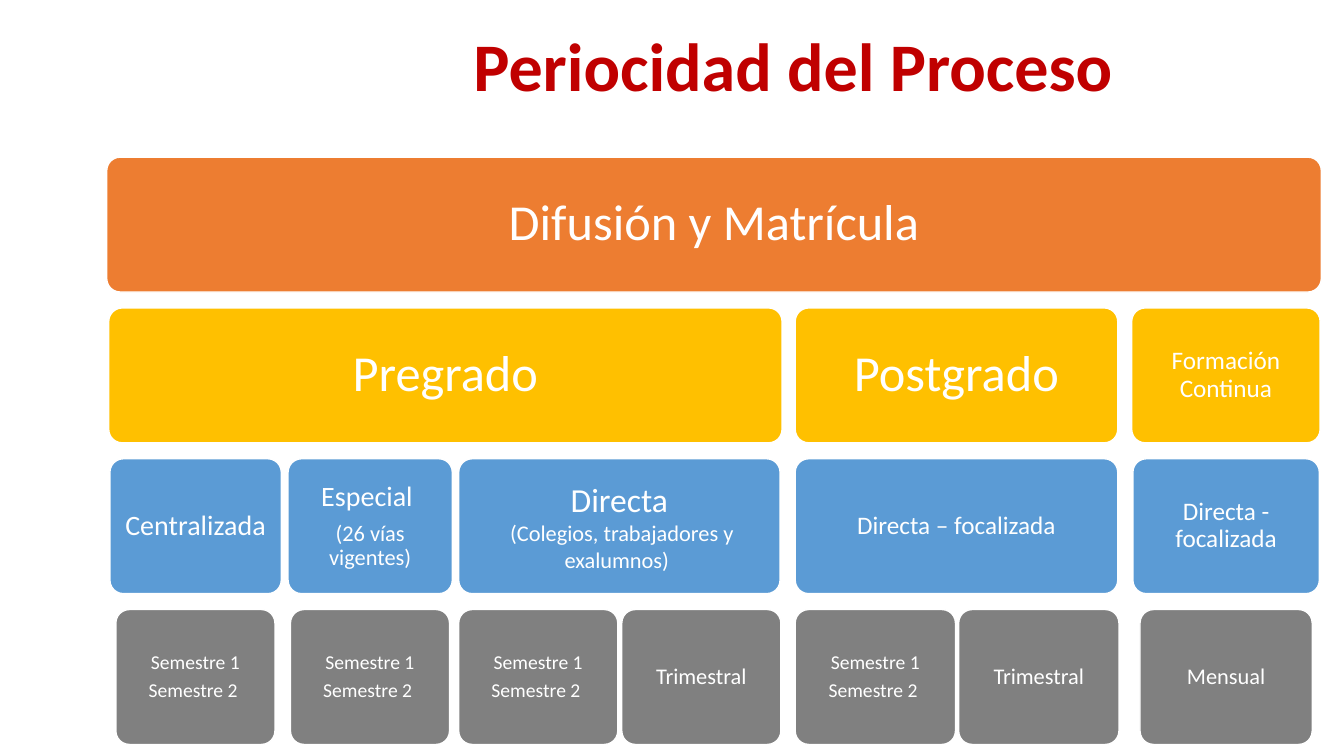
import pptx
import pptx.dml.color
import pptx.enum.shapes
import pptx.enum.text
import pptx.util
from pptx.util import Cm

RED = pptx.dml.color.RGBColor(0xC0, 0x00, 0x00)
ORANGE = pptx.dml.color.RGBColor(0xED, 0x7D, 0x31)
GOLD = pptx.dml.color.RGBColor(0xFF, 0xC0, 0x00)
BLUE = pptx.dml.color.RGBColor(0x5B, 0x9B, 0xD5)
GREY = pptx.dml.color.RGBColor(0x80, 0x80, 0x80)
WHITE = pptx.dml.color.RGBColor(0xFF, 0xFF, 0xFF)

CENTER = pptx.enum.text.PP_ALIGN.CENTER
LEFT = pptx.enum.text.PP_ALIGN.LEFT


def write_lines(frame, lines, color=WHITE, bold=False, align=CENTER,
                inset=0.25, line_spacing=0.9, gap=0.35):
    """Fill a frame with (text, size) lines; gap is a share of the text size."""
    frame.word_wrap = True
    frame.auto_size = pptx.enum.text.MSO_AUTO_SIZE.NONE
    frame.vertical_anchor = pptx.enum.text.MSO_ANCHOR.MIDDLE
    frame.margin_left = frame.margin_right = Cm(inset)
    frame.margin_top = frame.margin_bottom = Cm(inset)
    for index, (text, size) in enumerate(lines):
        paragraph = frame.paragraphs[0] if index == 0 else frame.add_paragraph()
        paragraph.alignment = align
        paragraph.line_spacing = line_spacing
        paragraph.space_before = pptx.util.Pt(0)
        is_last = index == len(lines) - 1
        paragraph.space_after = pptx.util.Pt(0 if is_last else round(size * gap))
        run = paragraph.add_run()
        run.text = text
        run.font.name = "Calibri"
        run.font.size = pptx.util.Pt(size)
        run.font.bold = bold
        run.font.color.rgb = color


presentation = pptx.Presentation()
presentation.slide_width = Cm(33.87)
presentation.slide_height = Cm(19.05)
slide = presentation.slides.add_slide(presentation.slide_layouts[5])

heading = slide.shapes.title
heading.left, heading.top = Cm(11.68), Cm(0.28)
heading.width, heading.height = Cm(18.54), Cm(2.92)
write_lines(heading.text_frame, [("Periocidad del Proceso", 48.6)],
            color=RED, bold=True, align=LEFT)

SEMESTERS = [("Semestre 1", 14), ("Semestre 2 ", 14)]
QUARTERLY = [("Trimestral", 16)]
AUDIENCE = {"line_spacing": 1, "gap": 0, "inset": 0.35}

# Each level: colour, then (left, width, lines, extra format) in centimetres
levels = [
    (ORANGE, [(2.69, 30.61, [("Difusión y Matrícula", 36)], {})]),
    (GOLD, [
        (2.74, 16.97, [("Pregrado", 36)], {}),
        (20.04, 8.13, [("Postgrado", 36)], {}),
        (28.52, 4.75, [("Formación Continua", 18)], {}),
    ]),
    (BLUE, [
        (2.77, 4.32, [("Centralizada", 20)], {}),
        (7.26, 4.14, [("Especial ", 20), ("(26 vías vigentes)", 16)], {}),
        (11.56, 8.1, [("Directa", 24),
                      (" (Colegios, trabajadores y exalumnos) ", 16)], AUDIENCE),
        (20.04, 8.13, [("Directa – focalizada", 18)], {}),
        (28.55, 4.7, [("Directa - focalizada", 18)], {}),
    ]),
    (GREY, [
        (2.92, 4.01, SEMESTERS, {}),
        (7.32, 4.01, SEMESTERS, {}),
        (11.56, 4.01, SEMESTERS, {}),
        (15.67, 4.01, QUARTERLY, {}),
        (20.04, 4.04, SEMESTERS, {}),
        (24.16, 4.04, QUARTERLY, {}),
        (28.73, 4.34, [("Mensual", 16)], {}),
    ]),
]

FIRST_LEVEL_TOP = 3.96
LEVEL_PITCH = 3.8
LEVEL_HEIGHT = 3.4

for depth, (fill_color, stages) in enumerate(levels):
    top = Cm(FIRST_LEVEL_TOP + depth * LEVEL_PITCH)
    for left, width, lines, text_format in stages:
        stage = slide.shapes.add_shape(
            pptx.enum.shapes.MSO_SHAPE.ROUNDED_RECTANGLE,
            Cm(left), top, Cm(width), Cm(LEVEL_HEIGHT))
        stage.adjustments[0] = 0.1
        stage.shadow.inherit = False
        stage.fill.solid()
        stage.fill.fore_color.rgb = fill_color
        stage.line.color.rgb = WHITE
        stage.line.width = pptx.util.Pt(1)
        write_lines(stage.text_frame, lines, **text_format)

presentation.save("out.pptx")
